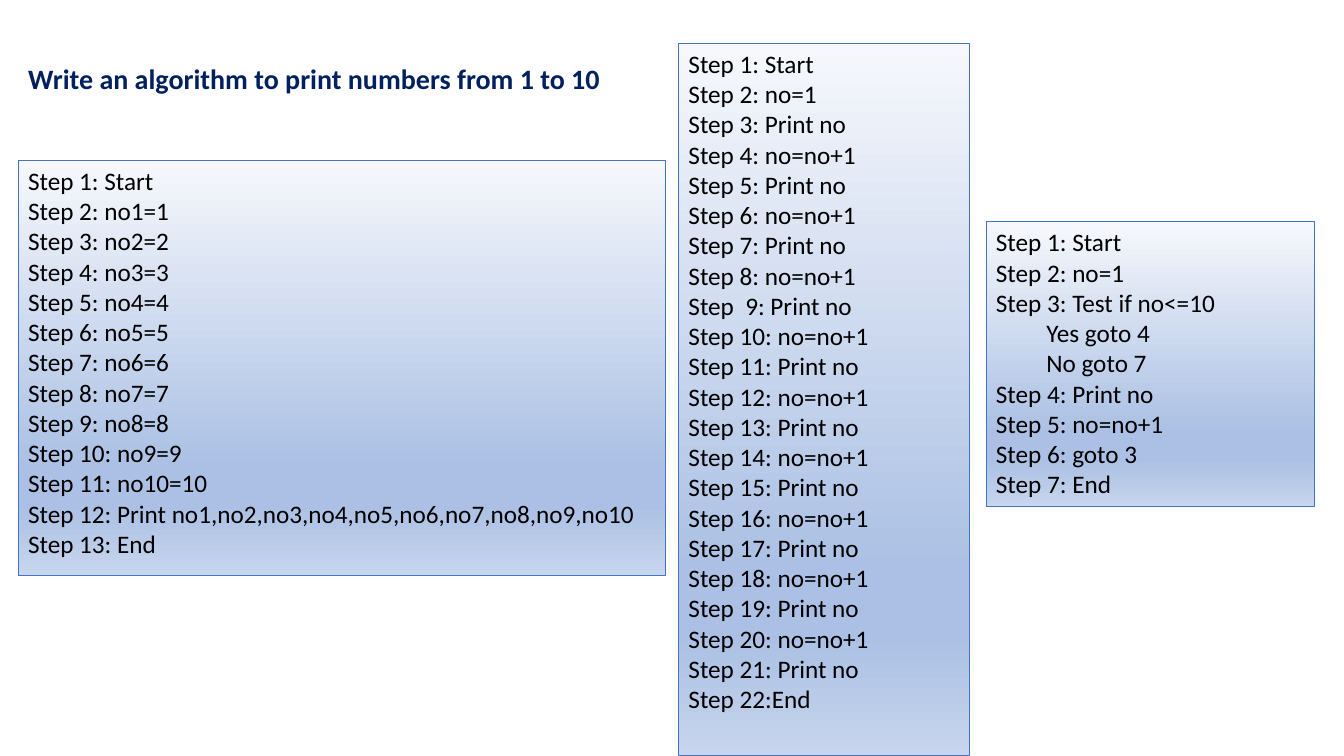
"""Build a slide comparing three algorithms that print the numbers 1 to 10."""
from lxml.etree import SubElement
from pptx import Presentation
from pptx.dml.color import RGBColor
from pptx.enum.shapes import MSO_SHAPE
from pptx.enum.text import MSO_ANCHOR, MSO_AUTO_SIZE, PP_ALIGN
from pptx.oxml.ns import qn
from pptx.util import Inches, Pt

COLORS = {
    "title": "002060",
    "text": "000000",
    "border": "4472C4",
    "light": "F6F8FC",
    "deep": "ABC0E4",
    "soft": "C7D5ED",
}
GRADIENT = [(0, "light"), (74, "deep"), (83, "deep"), (100, "soft")]


class AlgorithmSlide:
    """Hold the style and the current slide."""

    def __init__(self, presentation):
        self.font = "Calibri"
        self.slide = presentation.slides.add_slide(presentation.slide_layouts[5])

    def color(self, name):
        """Return a named colour."""
        return RGBColor.from_string(COLORS[name])

    def add_lines(self, shape, lines, size, color, bold=False, wrap=True):
        """Fill a shape with left-aligned lines, one paragraph each."""
        frame = shape.text_frame
        frame.word_wrap = wrap
        frame.auto_size = MSO_AUTO_SIZE.NONE
        frame.vertical_anchor = MSO_ANCHOR.TOP
        for index, line in enumerate(lines):
            paragraph = frame.add_paragraph() if index else frame.paragraphs[0]
            paragraph.alignment = PP_ALIGN.LEFT
            run = paragraph.add_run()
            run.text = line
            run.font.name = self.font
            run.font.size = Pt(size)
            run.font.bold = bold
            run.font.color.rgb = self.color(color)

    def title(self, text, left, top, width, height):
        """Place and format the title placeholder."""
        shape = self.slide.shapes.title
        shape.left, shape.top = Inches(left), Inches(top)
        shape.width, shape.height = Inches(width), Inches(height)
        self.add_lines(shape, [text], 20, "title", bold=True, wrap=False)

    def shade(self, shape):
        """Apply the vertical gradient to a shape."""
        shape.fill.gradient()
        shape.fill.gradient_angle = 270
        stops = shape.element.spPr.find(qn("a:gradFill")).find(qn("a:gsLst"))
        for stop in list(stops):
            stops.remove(stop)
        for percent, name in GRADIENT:
            stop = SubElement(stops, qn("a:gs"), pos=str(percent * 1000))
            SubElement(stop, qn("a:srgbClr"), val=COLORS[name])

    def panel(self, lines, left, top, width, height):
        """Draw a shaded box listing the steps of one algorithm."""
        shape = self.slide.shapes.add_shape(
            MSO_SHAPE.RECTANGLE, Inches(left), Inches(top), Inches(width), Inches(height)
        )
        shape.shadow.inherit = False
        self.shade(shape)
        shape.line.color.rgb = self.color("border")
        shape.line.width = Pt(0.75)
        self.add_lines(shape, lines, 18, "text")


def separate_variables():
    """List the steps that use ten variables."""
    numbers = range(1, 11)
    names = ",".join(f"no{number}" for number in numbers)
    assignments = [f"Step {number + 1}: no{number}={number}" for number in numbers]
    return ["Step 1: Start", *assignments, f"Step 12: Print {names}", "Step 13: End"]


def repeated_increment():
    """List the steps that alternate printing and adding one."""
    lines = ["Step 1: Start", "Step 2: no=1"]
    for step in range(3, 22):
        label = "Step  9" if step == 9 else f"Step {step}"
        lines.append(f"{label}: {'Print no' if step % 2 else 'no=no+1'}")
    return [*lines, "Step 22:End"]


def main():
    """Build and save the presentation."""
    presentation = Presentation()
    presentation.slide_width = Inches(13.33)
    presentation.slide_height = Inches(7.5)
    page = AlgorithmSlide(presentation)
    page.title("Write an algorithm to print numbers from 1 to 10", 0.18, 0.56, 5.91, 0.44)
    page.panel(separate_variables(), 0.18, 1.59, 6.42, 4.12)
    page.panel(repeated_increment(), 6.73, 0.43, 2.89, 7.07)
    loop = [
        "Step 1: Start",
        "Step 2: no=1",
        "Step 3: Test if no<=10",
        "\tYes goto 4",
        "\tNo goto 7",
        "Step 4: Print no",
        "Step 5: no=no+1",
        "Step 6: goto 3",
        "Step 7: End",
    ]
    page.panel(loop, 9.78, 2.2, 3.26, 2.83)
    presentation.save("out.pptx")


if __name__ == "__main__":
    main()
